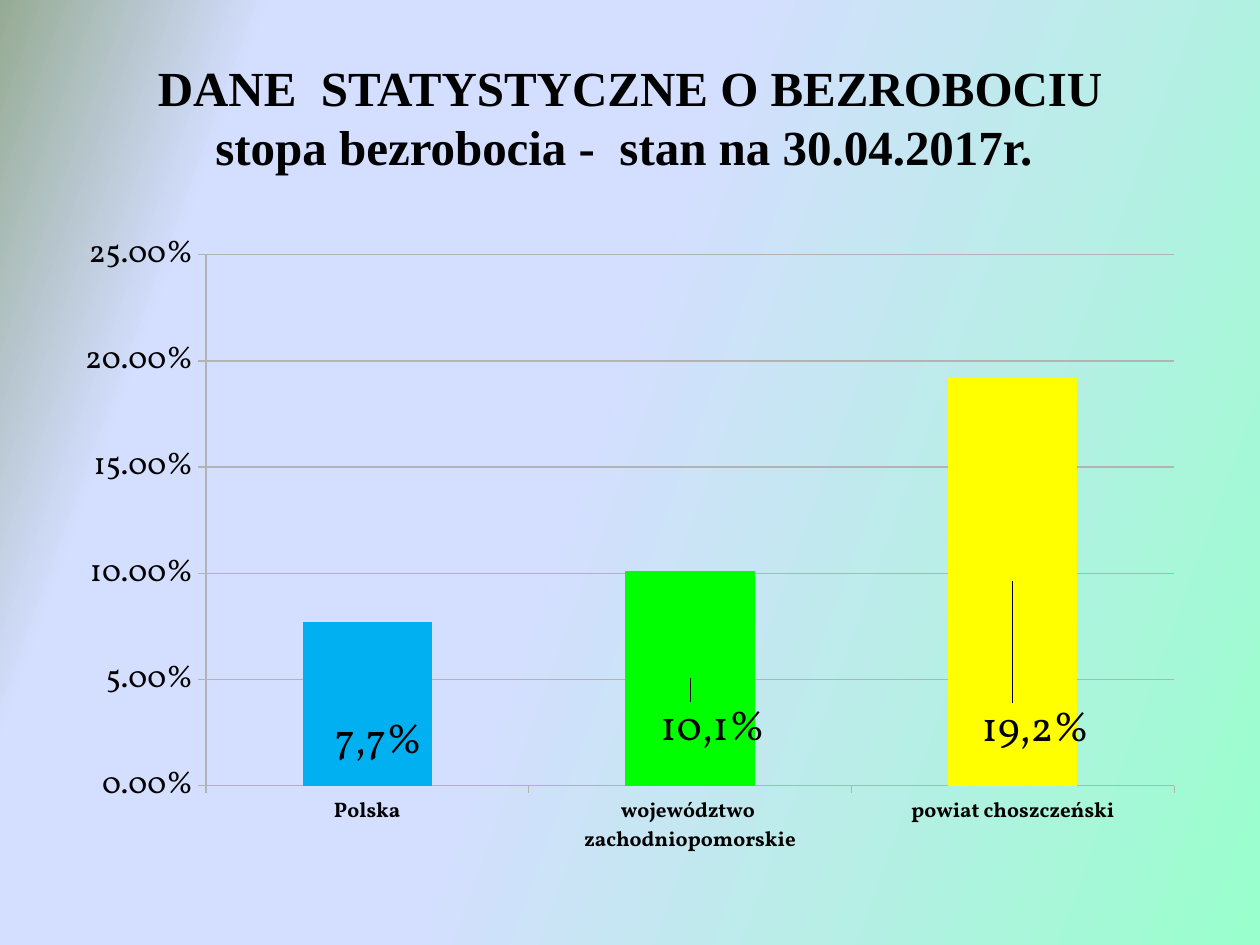
import copy

import pptx
import pptx.chart.data
import pptx.dml.color
import pptx.enum.chart
import pptx.enum.text
import pptx.oxml
import pptx.oxml.ns
import pptx.util
from pptx.util import Inches

COLORS = {
    "text": "000000", "rule": "B3B3B3", "series": "94C600",
    "poland": "00B0F0", "province": "00FF00", "county": "FFFF00",
}
BACKGROUND_STOPS = [(0, "99FFCC"), (0.54, "D4DEFF"), (0.83, "D4DEFF"), (1, "96AB94")]
RATES = [
    ("Polska", 0.077, "7,7%", "poland", (0.01, 0.06)),
    ("województwo  zachodniopomorskie", 0.101, "10,1%", "province", (0.02, 0.08)),
    ("powiat choszczeński", 0.192, "19,2%", "county", (0.02, 0.23)),
]


def rgb(value):
    """Turn a hex string into a colour."""
    return pptx.dml.color.RGBColor.from_string(value)


def style_font(font, size, name="Vollkorn", bold=False):
    """Set the face, size, weight and text colour of a font."""
    font.name = name
    font.size = pptx.util.Pt(size)
    font.bold = bold
    font.color.rgb = rgb(COLORS["text"])


def add_text(para, text, **style):
    """Write styled text into a paragraph, with line breaks at newlines."""
    for index, line in enumerate(text.split("\n")):
        if index:
            para.add_line_break()
        span = para.add_run()
        span.text = line
        style_font(span.font, **style)


def manual_layout(**settings):
    """Build a chart layout element from its settings."""
    layout = pptx.oxml.parse_xml(
        f"<c:layout {pptx.oxml.ns.nsdecls('c')}><c:manualLayout/></c:layout>")
    for tag, value in settings.items():
        item = pptx.oxml.parse_xml(
            f'<c:{tag} {pptx.oxml.ns.nsdecls("c")} val="{value}"/>')
        layout[0].append(item)
    return layout


def paint_background(slide):
    """Fill the background with a slanted gradient of four stops."""
    fill = slide.background.fill
    fill.gradient()
    fill.gradient_angle = 160
    stop_list = slide.element.xpath(".//p:bg//a:gsLst")[0]
    while len(stop_list) < len(BACKGROUND_STOPS):
        stop_list.append(copy.deepcopy(stop_list[0]))
    for stop, (position, color) in zip(fill.gradient_stops, BACKGROUND_STOPS):
        stop.position = position
        stop.color.rgb = rgb(color)


def add_heading(slide, left, top, width, height):
    """Place the centred two-line heading."""
    box = slide.shapes.add_textbox(left, top, width, height)
    frame = box.text_frame
    frame.word_wrap = True
    frame.vertical_anchor = pptx.enum.text.MSO_ANCHOR.MIDDLE
    para = frame.paragraphs[0]
    para.alignment = pptx.enum.text.PP_ALIGN.CENTER
    add_text(para, "DANE  STATYSTYCZNE O BEZROBOCIU\n"
             "stopa bezrobocia -  stan na 30.04.2017r. ",
             size=28, name="Times New Roman", bold=True)


def style_axes(chart):
    """Format both axes and the gridlines."""
    for axis, size, bold in ((chart.category_axis, 12, True), (chart.value_axis, 18, False)):
        axis.major_tick_mark = pptx.enum.chart.XL_TICK_MARK.OUTSIDE
        axis.format.line.color.rgb = rgb(COLORS["rule"])
        style_font(axis.tick_labels.font, size, bold=bold)
    scale = chart.value_axis
    scale.minimum_scale, scale.maximum_scale, scale.major_unit = 0, 0.25, 0.05
    scale.tick_labels.number_format = "0.00%"
    scale.tick_labels.number_format_is_linked = False
    scale.major_gridlines.format.line.color.rgb = rgb(COLORS["rule"])


def add_rate_chart(slide, left, top, width, height):
    """Place the column chart of unemployment rates."""
    chart_data = pptx.chart.data.CategoryChartData(number_format="0.00%")
    chart_data.categories = [rate[0] for rate in RATES]
    chart_data.add_series("Series 1", [rate[1] for rate in RATES])
    chart = slide.shapes.add_chart(
        pptx.enum.chart.XL_CHART_TYPE.COLUMN_STACKED,
        left, top, width, height, chart_data).chart
    chart.has_legend = False
    chart.has_title = False
    style_font(chart.font, 18)
    style_axes(chart)

    plot = chart.plots[0]
    plot.gap_width, plot.overlap, plot.vary_by_categories = 150, 100, False
    series = plot.series[0]
    series.format.fill.solid()
    series.format.fill.fore_color.rgb = rgb(COLORS["series"])
    for index, (_, _, label, color, (shift_x, shift_y)) in enumerate(RATES):
        point = series.points[index]
        point.format.fill.solid()
        point.format.fill.fore_color.rgb = rgb(COLORS[color])
        add_text(point.data_label.text_frame.paragraphs[0], label, size=24)
        label_index = chart.element.xpath(f".//c:dLbl/c:idx[@val='{index}']")[0]
        label_index.addnext(manual_layout(x=shift_x, y=shift_y))

    plot_area = chart.element.xpath(".//c:plotArea")[0]
    for layout in plot_area.xpath("./c:layout"):
        plot_area.remove(layout)
    plot_area.insert(0, manual_layout(
        layoutTarget="inner", xMode="edge", yMode="edge",
        x=0.126, y=0.053, w=0.854, h=0.818))


def main():
    """Build and save the slide."""
    deck = pptx.Presentation()
    deck.slide_width, deck.slide_height = Inches(10), Inches(7.5)
    slide = deck.slides.add_slide(deck.slide_layouts[6])
    paint_background(slide)
    add_heading(slide, Inches(0.5), Inches(0.3), Inches(9), Inches(1.25))
    add_rate_chart(slide, Inches(0.5), Inches(1.75), Inches(9), Inches(5.15))
    deck.save("out.pptx")


if __name__ == "__main__":
    main()
